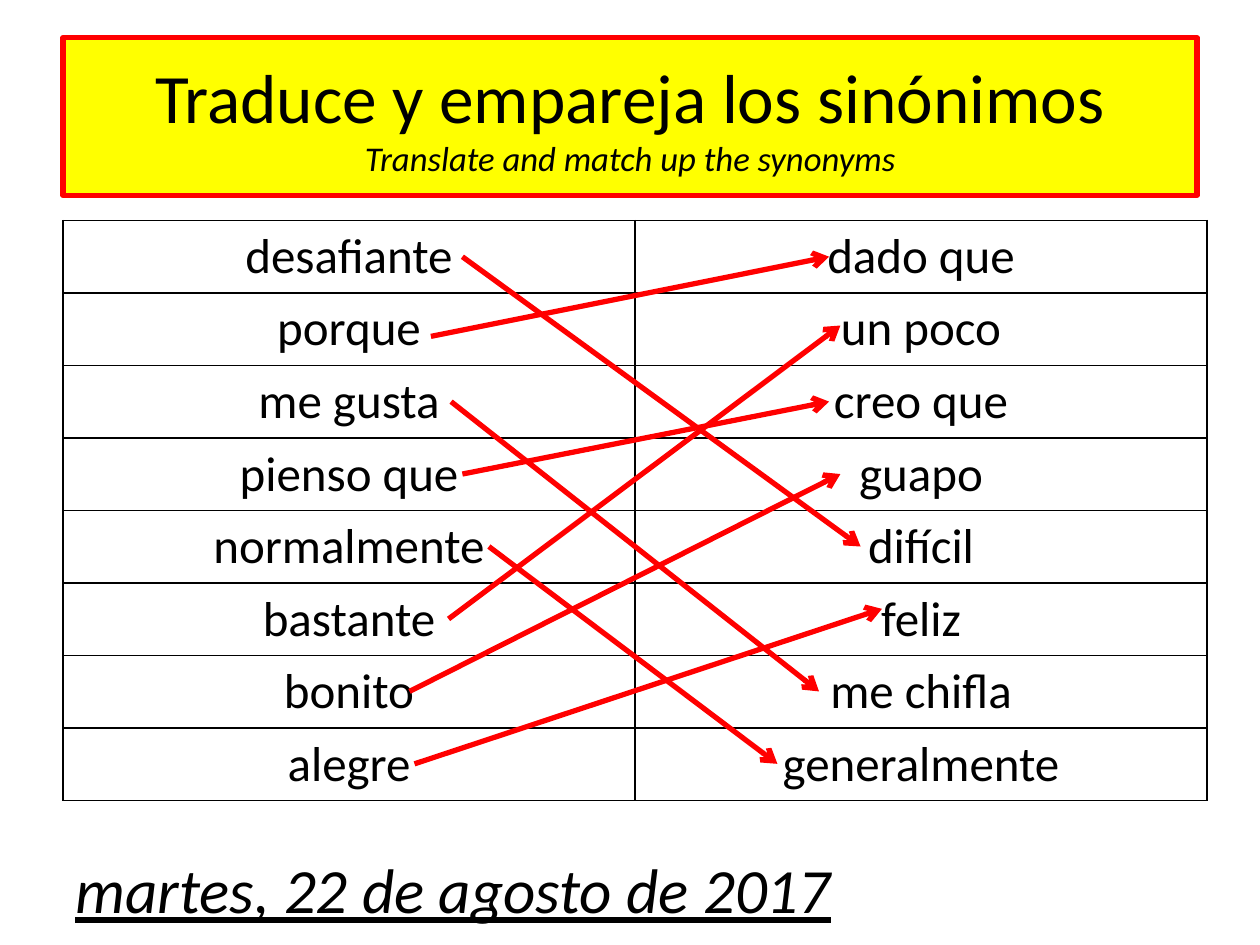
from pptx import Presentation
from pptx.util import Inches, Pt
from pptx.dml.color import RGBColor
from pptx.enum.shapes import MSO_CONNECTOR
from pptx.enum.text import MSO_ANCHOR, MSO_AUTO_SIZE, PP_ALIGN
from pptx.oxml.ns import qn
from lxml.etree import SubElement

TITLE = "Traduce y empareja los sinónimos"
HINT = "Translate and match up the synonyms"
DATE = "martes, 22 de agosto de 2017"
WORDS = [
    ("desafiante", "dado que"),
    ("porque", "un poco"),
    ("me gusta", "creo que"),
    ("pienso que", "guapo"),
    ("normalmente", "difícil"),
    ("bastante", "feliz"),
    ("bonito", "me chifla"),
    ("alegre", "generalmente"),
]
LINKS = [
    (0, 3.67, 4, 6.83),
    (1.1, 3.42, 0, 6.58),
    (2, 3.58, 6, 6.5),
    (3, 3.67, 2, 6.58),
    (4, 3.88, 7, 6.17),
    (5, 3.56, 0.95, 6.67),
    (6, 3.25, 3, 6.67),
    (7, 3.29, 4.86, 7),
]
RED, YELLOW, BLACK = "FF0000", "FFFF00", "000000"
LEFT, TOP, WIDE = 0.5, 1.75, 9.08
ROW, STEP = 0.57, 0.575


def color(code):
    return RGBColor.from_string(code)


def write(par, text, size, italic=False, line=False, align=PP_ALIGN.CENTER):
    par.alignment = align
    run = par.add_run()
    run.text = text
    font = run.font
    font.name, font.size = "Calibri", Pt(size)
    font.italic, font.underline = italic, line
    font.color.rgb = color(BLACK)


def place(shape, *box):
    shape.left, shape.top, shape.width, shape.height = map(Inches, box)


def border(cell):
    props = cell._tc.get_or_add_tcPr()
    for side in ("a:lnL", "a:lnR", "a:lnT", "a:lnB"):
        edge = SubElement(props, qn(side), w=str(Pt(1)))
        fill = SubElement(edge, qn("a:solidFill"))
        SubElement(fill, qn("a:srgbClr"), val=BLACK)


def head(slide):
    title = slide.shapes.title
    place(title, LEFT, 0.3, 9, 1.25)
    title.fill.solid()
    title.fill.fore_color.rgb = color(YELLOW)
    title.line.color.rgb = color(RED)
    title.line.width = Pt(3)
    frame = title.text_frame
    frame.auto_size = MSO_AUTO_SIZE.NONE
    frame.vertical_anchor = MSO_ANCHOR.MIDDLE
    par = frame.paragraphs[0]
    write(par, TITLE, 39.6)
    par.add_line_break()
    write(par, HINT, 19.8, italic=True)


def grid(slide):
    box = map(Inches, (LEFT, TOP, WIDE, ROW * len(WORDS)))
    table = slide.shapes.add_table(len(WORDS), 2, *box).table
    table.first_row = table.horz_banding = False
    for r, pair in enumerate(WORDS):
        for c, word in enumerate(pair):
            cell = table.cell(r, c)
            border(cell)
            cell.fill.background()
            write(cell.text_frame.paragraphs[0], word, 28)


def date(slide):
    box = map(Inches, (LEFT, 6.75, 7.58, 0.6))
    frame = slide.shapes.add_textbox(*box).text_frame
    frame.word_wrap = True
    frame.vertical_anchor = MSO_ANCHOR.MIDDLE
    write(frame.paragraphs[0], DATE, 36, italic=True, line=True, align=PP_ALIGN.LEFT)


def mid(row):
    return TOP + STEP * (row + 0.5)


def arrow(slide, start, x, end, to):
    ends = map(Inches, (x, mid(start), to, mid(end)))
    link = slide.shapes.add_connector(MSO_CONNECTOR.STRAIGHT, *ends)
    link.line.color.rgb = color(RED)
    link.line.width = Pt(3)
    SubElement(link.line._get_or_add_ln(), qn("a:tailEnd"), type="arrow")
    SubElement(link._element.spPr, qn("a:effectLst"))


def main():
    deck = Presentation()
    deck.slide_width, deck.slide_height = Inches(10), Inches(7.5)
    slide = deck.slides.add_slide(deck.slide_layouts[5])
    head(slide)
    grid(slide)
    date(slide)
    for link in LINKS:
        arrow(slide, *link)
    deck.save("out.pptx")


if __name__ == "__main__":
    main()
